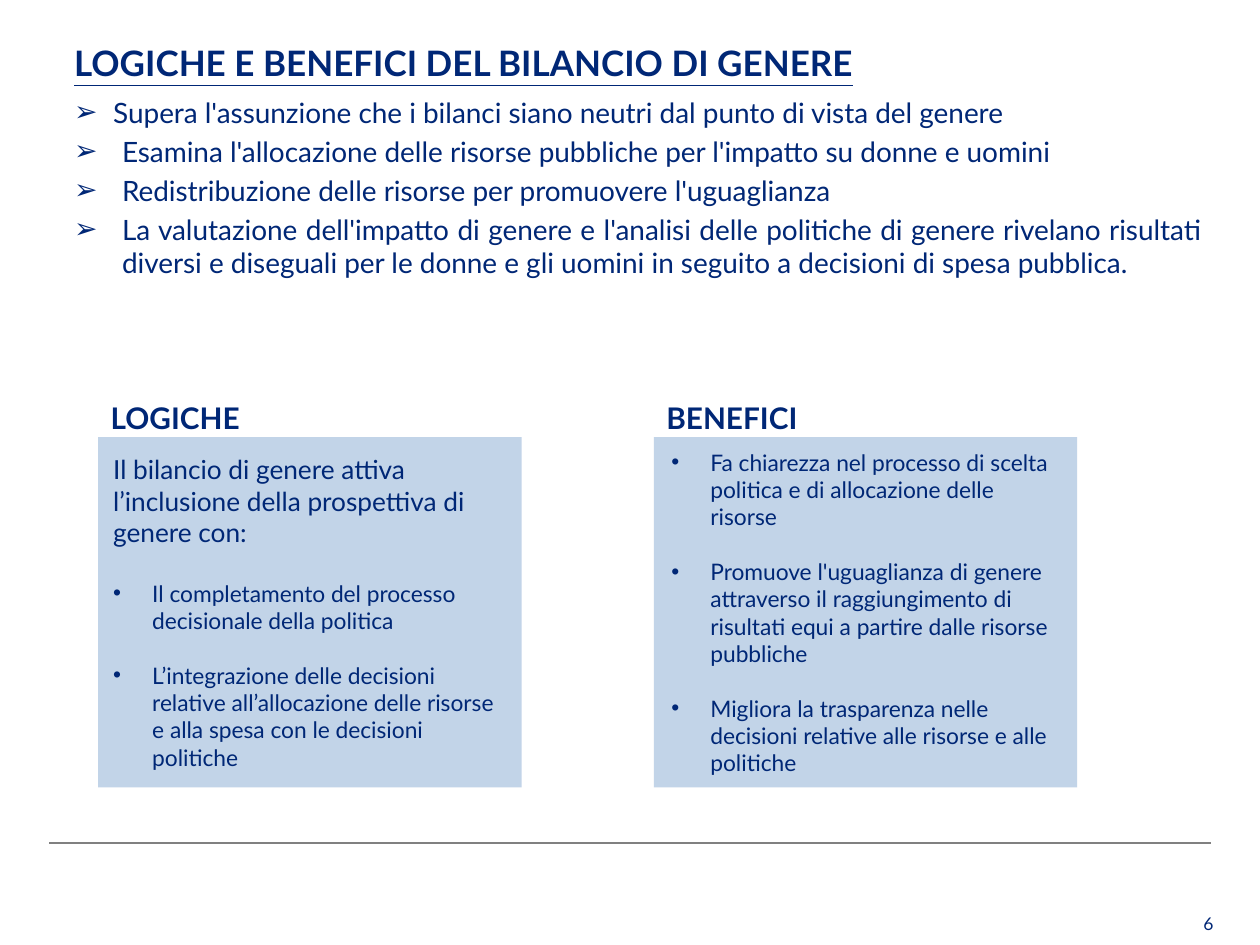
from lxml.etree import SubElement
from pptx import Presentation
from pptx.dml.color import RGBColor
from pptx.enum.shapes import MSO_CONNECTOR, MSO_SHAPE
from pptx.enum.text import MSO_ANCHOR, PP_ALIGN
from pptx.oxml.ns import qn
from pptx.util import Inches, Pt

COLORS = {"text": "002776", "panel": "4E81BD", "rule": "808080"}
FONT = "Lato"
COLUMNS, ROWS = 100, 75  # grid over the whole slide


def write(paragraph, text, size, bold=False, underline=False, align=PP_ALIGN.LEFT,
          bullet=None, indent=0, before=0, after=0):
    """Fill one paragraph; indent is the hanging indent in inches."""
    if bullet:
        properties = paragraph._p.get_or_add_pPr()
        properties.set("marL", str(Inches(indent)))
        properties.set("indent", str(-Inches(indent)))
        SubElement(properties, qn("a:buFont")).set("typeface", "Arial")
        SubElement(properties, qn("a:buChar")).set("char", bullet)
    paragraph.alignment = align
    paragraph.space_before, paragraph.space_after = Pt(before), Pt(after)
    run = paragraph.add_run()
    run.text = text
    font = run.font
    font.name, font.size = FONT, Pt(size)
    font.bold, font.underline = bold, underline
    font.color.rgb = RGBColor.from_string(COLORS["text"])


class SlideBuilder:
    """Holds the style and the current slide; lengths are grid columns and rows."""

    def __init__(self, presentation):
        self.slide = presentation.slides.add_slide(presentation.slide_layouts[6])
        self.column = presentation.slide_width / COLUMNS
        self.row = presentation.slide_height / ROWS

    def place(self, x, y, width, height):
        return (round(x * self.column), round(y * self.row),
                round(width * self.column), round(height * self.row))

    def text(self, area, paragraphs, anchor=MSO_ANCHOR.TOP):
        frame = self.slide.shapes.add_textbox(*self.place(*area)).text_frame
        frame.word_wrap = True
        frame.vertical_anchor = anchor
        for number, (content, style) in enumerate(paragraphs):
            paragraph = frame.add_paragraph() if number else frame.paragraphs[0]
            write(paragraph, content, **style)

    def panel(self, area, opacity):
        panel = self.slide.shapes.add_shape(MSO_SHAPE.RECTANGLE, *self.place(*area))
        panel.shadow.inherit = False
        panel.fill.solid()
        panel.fill.fore_color.rgb = RGBColor.from_string(COLORS["panel"])
        color = panel._element.spPr.find(f"{qn('a:solidFill')}/{qn('a:srgbClr')}")
        SubElement(color, qn("a:alpha")).set("val", str(opacity * 1000))
        panel.line.fill.background()

    def rule(self, x1, x2, y):
        left, top, right, bottom = self.place(x1, y, x2, y)
        rule = self.slide.shapes.add_connector(MSO_CONNECTOR.STRAIGHT, left, top, right, bottom)
        rule.line.color.rgb = RGBColor.from_string(COLORS["rule"])
        rule.line.width = Pt(0.75)
        SubElement(rule._element.spPr, qn("a:effectLst"))


def main():
    presentation = Presentation()
    presentation.slide_width, presentation.slide_height = Inches(10), Inches(7.5)
    builder = SlideBuilder(presentation)

    # Footer rule
    builder.rule(3.9, 96.1, 66.9)

    # Main points
    points = [
        "Supera l'assunzione che i bilanci siano neutri dal punto di vista del genere",
        "Esamina l'allocazione delle risorse pubbliche per l'impatto su donne e uomini",
        "Redistribuzione delle risorse per promuovere l'uguaglianza",
        "La valutazione dell'impatto di genere e l'analisi delle politiche di genere rivelano "
        "risultati diversi e diseguali per le donne e gli uomini in seguito a decisioni di "
        "spesa pubblica.",
    ]
    point_style = dict(size=16, align=PP_ALIGN.JUSTIFY, bullet="➢", after=3)
    builder.text((4.9, 7.1, 91.5, 59.6),
                 [(point, dict(point_style, indent=0.38 if number else 0.31))
                  for number, point in enumerate(points)])

    # Title and page number
    builder.text((4.9, 2.8, 93.3, 4.7), [("LOGICHE E BENEFICI DEL BILANCIO DI GENERE",
                                          dict(size=20, bold=True, underline=True))])
    builder.text((66.2, 72.3, 31.1, 2), [("6", dict(size=10, align=PP_ALIGN.RIGHT))],
                 anchor=MSO_ANCHOR.MIDDLE)

    # Two panels: heading, tinted background and list
    item = dict(size=13, bullet="•", indent=0.31)
    spaced_item = dict(item, before=15.6)
    logic = [
        ("Il bilancio di genere attiva l’inclusione della prospettiva di genere con:",
         dict(size=15)),
        ("Il completamento del processo decisionale della politica", dict(item, before=18)),
        ("L’integrazione delle decisioni relative all’allocazione delle risorse e alla spesa "
         "con le decisioni politiche", spaced_item),
    ]
    benefits = [
        ("Fa chiarezza nel processo di scelta politica e di allocazione delle risorse", item),
        ("Promuove l'uguaglianza di genere attraverso il raggiungimento di risultati equi a "
         "partire dalle risorse pubbliche", spaced_item),
        ("Migliora la trasparenza nelle decisioni relative alle risorse e alle politiche",
         spaced_item),
    ]
    panels = [
        ("LOGICHE", 7.8, (8, 35.5, 33.2, 26.4), logic),
        ("BENEFICI", 51.9, (52.3, 35.1, 33.2, 27.3), benefits),
    ]
    for heading, left, list_area, paragraphs in panels:
        builder.text((left, 31.25, 19, 3.9), [(heading, dict(size=17, bold=True))])
        builder.panel((left, 34.7, 33.6, 27.8), opacity=34)
        builder.text(list_area, paragraphs)

    presentation.save("out.pptx")


if __name__ == "__main__":
    main()
